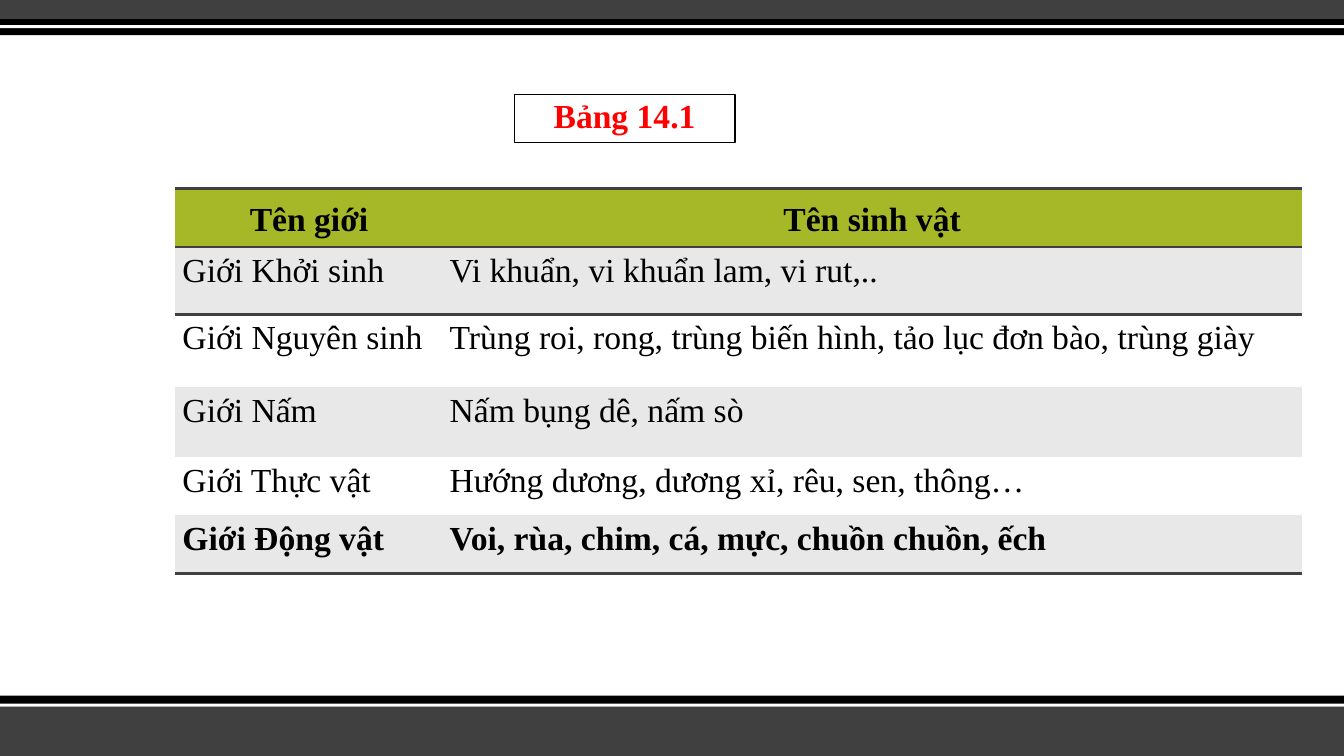
from pptx import Presentation
from pptx.dml.color import RGBColor
from pptx.enum.shapes import MSO_SHAPE as Shape
from pptx.enum.text import MSO_ANCHOR as Anchor, PP_ALIGN as Align
from pptx.oxml import parse_xml
from pptx.oxml.ns import nsdecls, qn
from pptx.util import Inches, Pt

COLORS = {"black": "000000", "white": "FFFFFF", "charcoal": "404040",
          "green": "A6B727", "band": "E8E8E8", "red": "FF0000"}
PLAIN_TABLE_STYLE = "{2D5ABB26-0587-4C30-8999-92F81FD0307C}"

BARS = [(7, 0.5, "charcoal"), (6.9, 0.11, "black"), (6.98, 0.03, "white"),
        (0, 0.19, "charcoal"), (0.19, 0.16, "black"), (0.25, 0.03, "white")]
KINGDOMS = [
    ("Tên giới", "Tên sinh vật"),
    ("Giới Khởi sinh", "Vi khuẩn, vi khuẩn lam, vi rut,.."),
    ("Giới Nguyên sinh",
     "Trùng roi, rong, trùng biến hình, tảo lục đơn bào, trùng giày"),
    ("Giới Nấm", "Nấm bụng dê, nấm sò"),
    ("Giới Thực vật", "Hướng dương, dương xỉ, rêu, sen, thông…"),
    ("Giới Động vật", "Voi, rùa, chim, cá, mực, chuồn chuồn, ếch"),
]
COLUMN_WIDTHS = [2.65, 8.52]
ROW_HEIGHTS = [0.58, 0.67, 0.72, 0.69, 0.58, 0.58]


def rgb(name):
    return RGBColor.from_string(COLORS[name])


class SlideBuilder:
    font = "Times New Roman"
    size = Pt(24)

    def __init__(self, presentation):
        self.slide = presentation.slides.add_slide(presentation.slide_layouts[5])
        self.width = presentation.slide_width

    def bar(self, top, height, color):
        shape = self.slide.shapes.add_shape(
            Shape.RECTANGLE, 0, Inches(top), self.width, Inches(height))
        shape.shadow.inherit = False
        shape.fill.solid()
        shape.fill.fore_color.rgb = rgb(color)
        shape.line.fill.background()

    def text(self, paragraph, text, color, bold, align, spacing):
        paragraph.alignment = align
        paragraph.line_spacing = spacing
        run = paragraph.add_run()
        run.text = text
        run.font.name = self.font
        run.font.size = self.size
        run.font.bold = bold
        run.font.color.rgb = rgb(color)

    def title(self, text, left, top, width, height):
        title = self.slide.shapes.title
        title.left, title.top = Inches(left), Inches(top)
        title.width, title.height = Inches(width), Inches(height)
        title.line.color.rgb = rgb("black")
        title.line.width = Pt(0.75)
        frame = title.text_frame
        frame.word_wrap = True
        frame.vertical_anchor = Anchor.TOP
        self.text(frame.paragraphs[0], text, "red", True, Align.CENTER, 0.9)

    def border(self, cell, sides):
        """Draw charcoal rules on the given sides, "T" before "B"."""
        properties = cell._tc.get_or_add_tcPr()
        for position, side in enumerate(sides):
            properties.insert(position, parse_xml(
                f'<a:ln{side} {nsdecls("a")} w="{Pt(2)}"><a:solidFill>'
                f'<a:srgbClr val="{COLORS["charcoal"]}"/>'
                f'</a:solidFill></a:ln{side}>'))

    def table(self, rows, left, top, widths, heights):
        frame = self.slide.shapes.add_table(
            len(rows), len(widths), Inches(left), Inches(top),
            Inches(sum(widths)), Inches(sum(heights)))
        table = frame.table
        table._tbl.tblPr.find(qn("a:tableStyleId")).text = PLAIN_TABLE_STYLE
        for column, width in zip(table.columns, widths):
            column.width = Inches(width)
        last = len(rows) - 1
        for index, (texts, height) in enumerate(zip(rows, heights)):
            table.rows[index].height = Inches(height)
            header = index == 0
            fill = "green" if header else "band" if index % 2 else "white"
            for cell, text in zip(table.rows[index].cells, texts):
                cell.margin_left = cell.margin_right = Inches(0.07)
                cell.margin_top = cell.margin_bottom = 0
                cell.vertical_anchor = Anchor.MIDDLE if header else Anchor.TOP
                cell.fill.solid()
                cell.fill.fore_color.rgb = rgb(fill)
                paragraph = cell.text_frame.paragraphs[0]
                paragraph.space_before = Pt(6)
                self.text(paragraph, text, "black", index in (0, last),
                          Align.CENTER if header else Align.JUSTIFY, 1.15)
                self.border(cell, {0: "TB", 1: "T", last: "B"}.get(index, ""))


def main():
    presentation = Presentation()
    presentation.slide_width = Inches(13.33)
    presentation.slide_height = Inches(7.5)
    builder = SlideBuilder(presentation)
    for bar in BARS:
        builder.bar(*bar)
    builder.table(KINGDOMS, 1.74, 1.87, COLUMN_WIDTHS, ROW_HEIGHTS)
    builder.title("Bảng 14.1", 5.1, 0.94, 2.19, 0.47)
    presentation.save("out.pptx")


if __name__ == "__main__":
    main()
